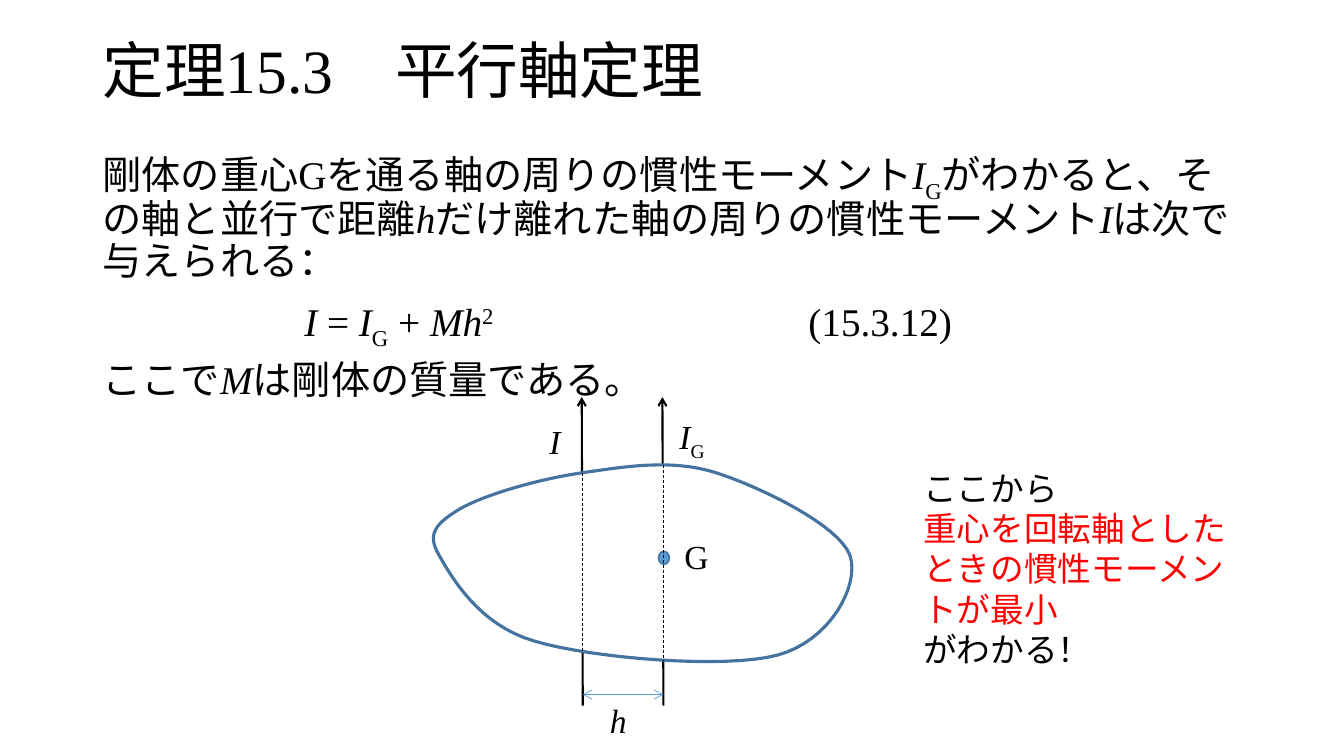
import pptx
import pptx.util
import pptx.dml.color
import pptx.enum.dml
import pptx.enum.shapes
import pptx.enum.text
import lxml.etree

# All lengths are cells of a square grid, ten cells to the inch
WIDE, HIGH = 133.3, 75
FONT = "Times New Roman"
BLACK, WHITE, RED = "000000", "FFFFFF", "FF0000"
BLUE, NAVY = "5B9BD5", "43739E"
SHIFT = {"sub": "-25000", "sup": "30000"}
STEPS = 16

# Outline of the body: start point, then two handles and an end per curve
START = (2.6, 11.1)
CURVES = [
    ((5, 9.7), (10.5, 8.1), (14.8, 7.5)),
    ((19, 6.9), (23.6, 6.1), (28, 7.5)),
    ((32.4, 8.9), (40.2, 12.7), (41.3, 15.7)),
    ((42.3, 18.7), (39.3, 24.2), (34.1, 25.6)),
    ((28.9, 27), (15.6, 25.9), (10, 24.2)),
    ((4.4, 22.6), (1.7, 17.7), (0.5, 15.6)),
    ((-0.7, 13.5), (0.3, 12.5), START),
]


def cell(num):
    return pptx.util.Inches(num / 10)


def paint(color, code):
    color.rgb = pptx.dml.color.RGBColor.from_string(code)


def tag(root, name, **attrs):
    return lxml.etree.SubElement(root, pptx.oxml.ns.qn("a:" + name), **attrs)


def write(slide, box, paras, size, color=BLACK, space=None, before=0,
          wrap=True, fit=True, middle=False, stops=()):
    """Each paragraph is a list of (text, style) pairs."""
    frame = slide.shapes.add_textbox(*map(cell, box)).text_frame
    frame.word_wrap = wrap
    kinds = pptx.enum.text.MSO_AUTO_SIZE
    frame.auto_size = kinds.SHAPE_TO_FIT_TEXT if fit else kinds.NONE
    if middle:
        frame.vertical_anchor = pptx.enum.text.MSO_ANCHOR.MIDDLE
    for num, parts in enumerate(paras):
        para = frame.add_paragraph() if num else frame.paragraphs[0]
        if space:
            para.line_spacing = space
            para.space_before = pptx.util.Pt(before)
        if stops:
            tabs = tag(para._p.get_or_add_pPr(), "tabLst")
            for stop in stops:
                tag(tabs, "tab", pos=str(int(cell(stop))), algn="l")
        for text, style in parts:
            run = para.add_run()
            run.text = text
            run.font.name = FONT
            run.font.size = pptx.util.Pt(size)
            run.font.italic = style == "i"
            paint(run.font.color, RED if style == "red" else color)
            if style in SHIFT:
                run._r.get_or_add_rPr().set("baseline", SHIFT[style])


def stroke(slide, first, last, color, width, ends=(), dash=False):
    line = slide.shapes.add_connector(
        pptx.enum.shapes.MSO_CONNECTOR.STRAIGHT, *map(cell, first + last))
    paint(line.line.color, color)
    line.line.width = pptx.util.Pt(width)
    if dash:
        line.line.dash_style = pptx.enum.dml.MSO_LINE.DASH
    for end in ends:
        tag(line.line._get_or_add_ln(), end, type="arrow")
    tag(line._element.spPr, "effectLst")


def finish(shape, fill, color, width):
    shape.shadow.inherit = False
    shape.fill.solid()
    paint(shape.fill.fore_color, fill)
    paint(shape.line.color, color)
    shape.line.width = pptx.util.Pt(width)


def trace():
    """Points along the closed outline."""
    dots, here = [START], START
    for one, two, goal in CURVES:
        for step in range(1, STEPS + 1):
            t = step / STEPS
            u = 1 - t
            dots.append(tuple(
                u**3 * a + 3 * u * u * t * b + 3 * u * t * t * c + t**3 * d
                for a, b, c, d in zip(here, one, two, goal)))
        here = goal
    return dots


def title(slide, box):
    write(slide, box, [[("定理15.3\t平行軸定理", "")]], 44,
          space=0.9, fit=False, middle=True, stops=(29,))


def theorem(slide, box):
    write(slide, box, [
        [("剛体の重心Gを通る軸の周りの慣性モーメント", ""), ("I", "i"),
         ("G", "sub"), ("がわかると、その軸と並行で距離", ""), ("h", "i"),
         ("だけ離れた軸の周りの慣性モーメント", ""), ("I", "i"),
         ("は次で与えられる：", "")],
        [("\t", ""), ("I", "i"), (" = ", ""), ("I", "i"), ("G", "sub"),
         (" + ", ""), ("Mh", "i"), ("2", "sup"), ("\t(15.3.12)", "")],
        [("ここで", ""), ("M", "i"), ("は剛体の質量である。", "")],
    ], 28, space=0.9, before=10, fit=False, stops=(20, 70))


def figure(slide, box):
    left, top, wide, high = box

    def at(x, y):
        return left + x, top + y

    # Axes, hidden by the body where they pass behind it
    near, far = 14.8, 22.8
    for axis in (near, far):
        stroke(slide, at(axis, high), at(axis - 0.1, 0), BLACK, 1.5,
               ["tailEnd"])

    # Rigid body
    dots = [tuple(map(cell, at(*dot))) for dot in trace()]
    pen = slide.shapes.build_freeform(*dots[0])
    pen.add_line_segments(dots[1:], close=True)
    finish(pen.convert_to_shape(), WHITE, NAVY, 2.25)

    # Distance between the axes
    stroke(slide, at(near, 29.5), at(far, 29.5), BLUE, 0.5,
           ["headEnd", "tailEnd"])

    # Labels
    for x, y, width, parts in [
        (16.5, 29.5, 3.7, [("h", "i")]),
        (10.5, 1.9, 3.1, [("I", "i")]),
        (23.4, 1.4, 4.8, [("I", "i"), ("G", "sub")]),
        (23.9, 13.3, 4.5, [("G", "")]),
    ]:
        write(slide, at(x, y) + (width, 5), [parts], 24, wrap=False)

    # Centre of mass and the inner parts of the axes
    dot = slide.shapes.add_shape(pptx.enum.shapes.MSO_SHAPE.OVAL,
                                 *map(cell, at(22.3, 15.3) + (1.1, 1.3)))
    finish(dot, BLUE, NAVY, 1)
    for axis, first, last in [(far, 6.7, 26.2), (near, 7.5, 25.3)]:
        stroke(slide, at(axis, first), at(axis, last), BLACK, 0.5, dash=True)


def remark(slide, box):
    write(slide, box, [
        [("ここから", "")],
        [("重心を回転軸としたときの慣性モーメントが最小", "red")],
        [("がわかる！", "")],
    ], 24)


def main():
    deck = pptx.Presentation()
    deck.slide_width, deck.slide_height = cell(WIDE), cell(HIGH)
    slide = deck.slides.add_slide(deck.slide_layouts[6])
    title(slide, (9.2, 0, 115, 14.5))
    theorem(slide, (9.2, 14.5, 115, 26.1))
    figure(slide, (43, 39.4, 41.5, 30.6))
    remark(slide, (90.6, 45.9, 34.5, 21.2))
    deck.save("out.pptx")


if __name__ == "__main__":
    main()
